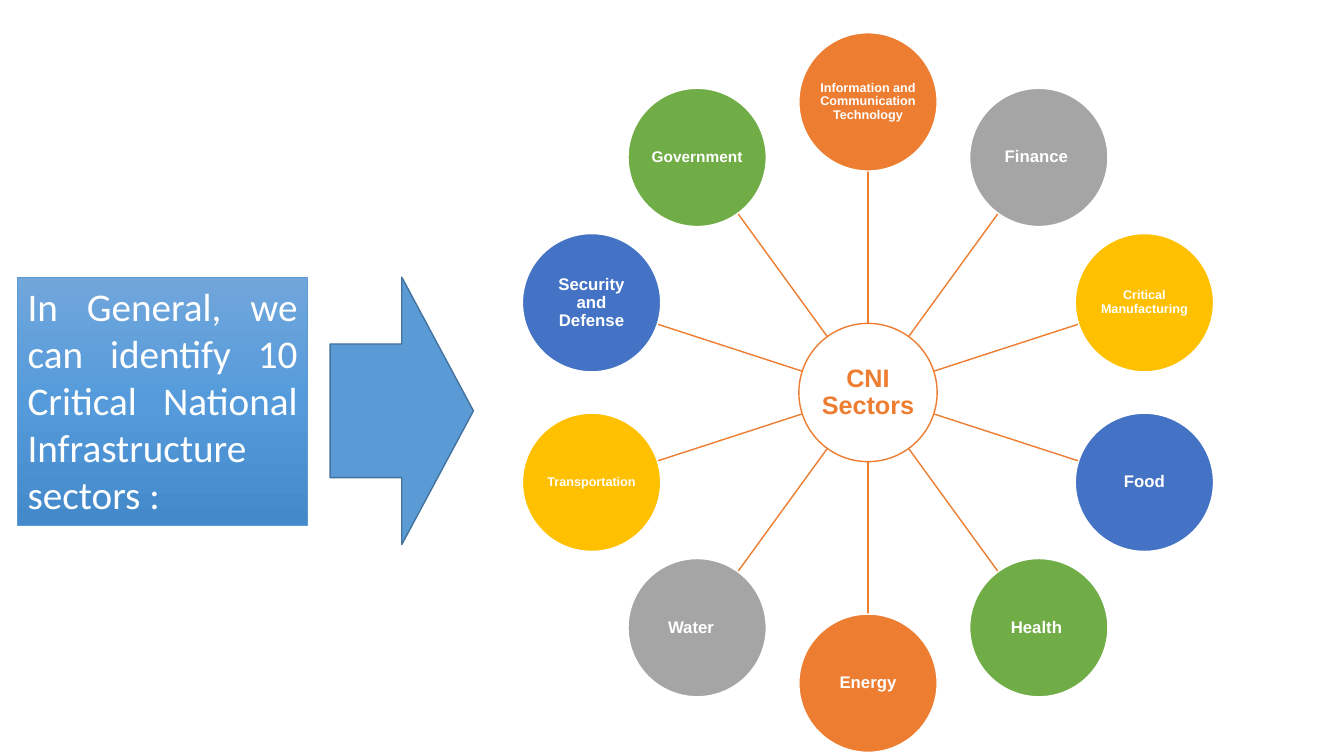
from copy import deepcopy
from dataclasses import dataclass
from itertools import cycle
from math import cos, pi, sin

from pptx import Presentation
from pptx.dml.color import RGBColor
from pptx.enum.shapes import MSO_CONNECTOR, MSO_SHAPE
from pptx.enum.text import MSO_ANCHOR, PP_ALIGN
from pptx.oxml.ns import qn
from pptx.oxml.xmlchemy import OxmlElement
from pptx.util import Pt

ELLIPSE, RECTANGLE, ARROW = MSO_SHAPE.OVAL, MSO_SHAPE.RECTANGLE, MSO_SHAPE.RIGHT_ARROW
STRAIGHT = MSO_CONNECTOR.STRAIGHT
CENTER, JUSTIFY = PP_ALIGN.CENTER, PP_ALIGN.JUSTIFY
TOP, MIDDLE = MSO_ANCHOR.TOP, MSO_ANCHOR.MIDDLE


@dataclass(frozen=True)
class Theme:
    white: str = "FFFFFF"
    accent: str = "ED7D31"
    sectors: tuple = ("ED7D31", "A5A5A5", "FFC000", "4472C4", "70AD47")
    arrow: str = "5B9BD5"
    arrow_line: str = "43739E"
    intro_line: str = "5B9BD5"
    intro_stops: tuple = ((0, "71A6DB"), (0.5, "559BDB"), (1, "448ACA"))
    intro_font: str = "Calibri"
    wheel_font: str = "Arial"
    intro_size: float = 28
    hub_size: float = 18
    large: float = 12
    medium: float = 11
    small: float = 9


THEME = Theme()

# Clockwise from the top: label, type size, extra right margin
SECTORS = (
    ("Information and Communication Technology", THEME.small, 0),
    ("Finance", THEME.large, 3.3),
    ("Critical Manufacturing", THEME.small, 0),
    ("Food", THEME.large, 0),
    ("Health", THEME.large, 3.3),
    ("Energy", THEME.large, 0),
    ("Water", THEME.large, 8.7),
    ("Transportation", THEME.small, 0),
    ("Security and Defense", THEME.large, 0),
    ("Government", THEME.medium, 0),
)


def set_all(target, values):
    for name, value in values.items():
        setattr(target, name, value)


def style_line(line, color, width):
    line.color.rgb = RGBColor.from_string(color)
    line.width = Pt(width)


def add_filled(page, kind, box, fill, line, width=1):
    shape = page.shapes.add_shape(kind, *(Pt(length) for length in box))
    shape.shadow.inherit = False
    shape.fill.solid()
    shape.fill.fore_color.rgb = RGBColor.from_string(fill)
    style_line(shape.line, line, width)
    return shape


def write(shape, text, color, frame_format, para_format, font_format):
    frame = shape.text_frame
    set_all(frame, {"word_wrap": True, **frame_format})
    para = frame.paragraphs[0]
    set_all(para, para_format)
    span = para.add_run()
    span.text = text
    set_all(span.font, font_format)
    span.font.color.rgb = RGBColor.from_string(color)


def add_disc(page, center, diameter, fill, line, text, color, size, right_pad=0):
    x, y = center
    box = (x - diameter / 2, y - diameter / 2, diameter, diameter)
    disc = add_filled(page, ELLIPSE, box, fill, line)
    inset = Pt(0.7)
    write(disc, text, color,
          {"margin_left": inset, "margin_top": inset, "margin_bottom": inset,
           "margin_right": inset + Pt(right_pad), "vertical_anchor": MIDDLE},
          {"alignment": CENTER, "line_spacing": 0.9},
          {"name": THEME.wheel_font, "size": Pt(size), "bold": True})


def add_spoke(page, start, end):
    spoke = page.shapes.add_connector(STRAIGHT, *(Pt(v) for v in (*start, *end)))
    style_line(spoke.line, THEME.accent, 1)
    spoke._element.spPr.append(OxmlElement("a:effectLst"))


def add_sector_wheel(page, box):
    """Place a hub and evenly spaced sector discs inside a square box."""
    left, top, side = box
    diameter = 98.8
    reach = (side - diameter) / 2
    hub = (left + side / 2, top + side / 2)

    def at(angle, distance):
        return hub[0] + distance * sin(angle), hub[1] - distance * cos(angle)

    add_disc(page, hub, diameter, THEME.white, THEME.accent,
             "CNI Sectors", THEME.accent, THEME.hub_size)
    for index, (sector, fill) in enumerate(zip(SECTORS, cycle(THEME.sectors))):
        label, size, right_pad = sector
        angle = 2 * pi * index / len(SECTORS)
        add_spoke(page, at(angle, diameter / 2), at(angle, reach - diameter / 2))
        add_disc(page, at(angle, reach), diameter, fill, THEME.white,
                 label, THEME.white, size, right_pad)


def fill_gradient(shape, stops):
    """Fill from top to bottom with any number of stops."""
    fill = shape.fill
    fill.gradient()
    fill.gradient_angle = 270
    stop_list = shape._element.spPr.find(qn("a:gradFill")).find(qn("a:gsLst"))
    while len(stop_list) < len(stops):
        stop_list.append(deepcopy(stop_list[0]))
    for stop, (position, color) in zip(fill.gradient_stops, stops):
        stop.position = position
        stop.color.rgb = RGBColor.from_string(color)


def add_intro(page, box):
    """Place the statement and the arrow that leads to the wheel."""
    left, top, width, height = box
    text_width, text_height, arrow_width = 207, 177, 102.4
    statement = add_filled(page, RECTANGLE, (left, top, text_width, text_height),
                           THEME.white, THEME.intro_line, 0.5)
    fill_gradient(statement, THEME.intro_stops)
    write(statement,
          "In General, we can identify 10 Critical National Infrastructure sectors :",
          THEME.white, {"vertical_anchor": TOP}, {"alignment": JUSTIFY},
          {"name": THEME.intro_font, "size": Pt(THEME.intro_size)})
    add_filled(page, ARROW, (left + width - arrow_width, top, arrow_width, height),
               THEME.arrow, THEME.arrow_line)


def main():
    deck = Presentation()
    deck.slide_width, deck.slide_height = Pt(960), Pt(540)
    page = deck.slides.add_slide(deck.slide_layouts[6])
    add_sector_wheel(page, (363, 23.4, 514))
    add_intro(page, (12.6, 198, 325.6, 191))
    deck.save("out.pptx")


if __name__ == "__main__":
    main()
